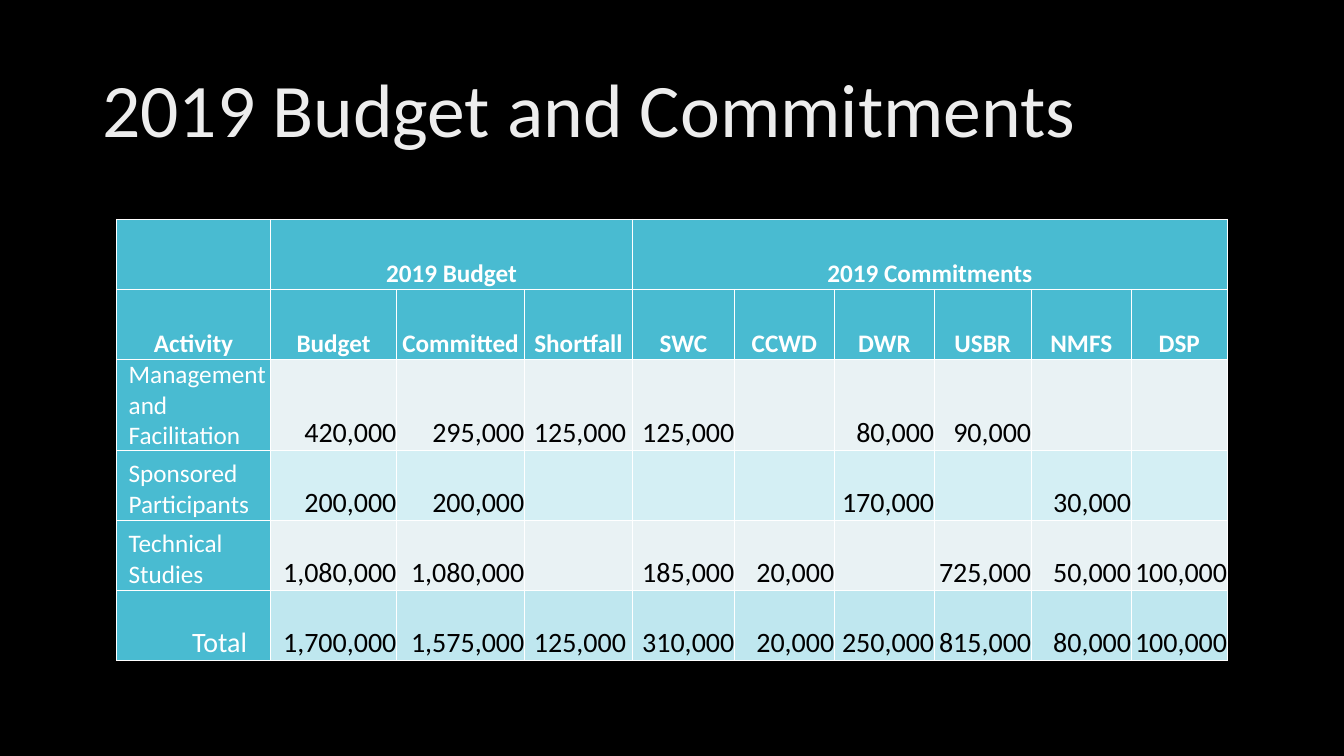
from lxml.etree import SubElement
from pptx import Presentation
from pptx.dml.color import RGBColor
from pptx.enum.text import MSO_ANCHOR, PP_ALIGN
from pptx.oxml.ns import qn
from pptx.util import Pt

FONT = "Calibri"
BLACK = RGBColor(0x00, 0x00, 0x00)
WHITE = RGBColor(0xFF, 0xFF, 0xFF)
TITLE_GREY = RGBColor(0xED, 0xED, 0xED)
TEAL = RGBColor(0x49, 0xBB, 0xD1)
PALE_GREY = RGBColor(0xE9, 0xF2, 0xF4)
PALE_TEAL = RGBColor(0xD4, 0xEF, 0xF4)
TOTAL_TEAL = RGBColor(0xBF, 0xE7, 0xEF)

COLUMN_WIDTHS = [110, 90, 91.4, 77.1, 72.9, 71.4, 71.4, 69.3, 71.4, 68.6]
ROW_HEIGHT = 50
LABEL_INDENT = 8.64
TOTAL_INDENT = 54
SHORTFALL_COLUMN = 3
SHORTFALL_INSET = 4.5

GROUPS = ["", "2019 Budget", "", "", "2019 Commitments", "", "", "", "", ""]
GROUP_SPANS = [(1, 3), (4, 9)]
HEADINGS = ["Activity", "Budget", "Committed", "Shortfall",
            "SWC", "CCWD", "DWR", "USBR", "NMFS", "DSP"]
ACTIVITIES = [
    ["Management and Facilitation", "420,000", "295,000", "125,000",
     "125,000", "", "80,000", "90,000", "", ""],
    ["Sponsored Participants", "200,000", "200,000", "",
     "", "", "170,000", "", "30,000", ""],
    ["Technical Studies", "1,080,000", "1,080,000", "",
     "185,000", "20,000", "", "725,000", "50,000", "100,000"],
]
TOTALS = ["Total", "1,700,000", "1,575,000", "125,000",
          "310,000", "20,000", "250,000", "815,000", "80,000", "100,000"]


def write(paragraph, text, size, color, align=PP_ALIGN.LEFT, bold=False):
    paragraph.text = text
    paragraph.alignment = align
    font = paragraph.font
    font.name = FONT
    font.size = Pt(size)
    font.bold = bold
    font.color.rgb = color


def add_title(slide, text):
    title = slide.shapes.add_textbox(Pt(66), Pt(28.8), Pt(828), Pt(104.4))
    frame = title.text_frame
    frame.word_wrap = True
    frame.vertical_anchor = MSO_ANCHOR.MIDDLE
    heading = frame.paragraphs[0]
    heading.line_spacing = 0.9
    write(heading, text, 54, TITLE_GREY)


def add_borders(cell):
    properties = cell._tc.get_or_add_tcPr()
    for side in ("a:lnL", "a:lnR", "a:lnT", "a:lnB"):
        border = SubElement(properties, qn(side), w=str(Pt(1)))
        fill = SubElement(border, qn("a:solidFill"))
        SubElement(fill, qn("a:srgbClr"), val=str(WHITE))


def fill_cell(cell, text, fill, size, color, align, bold=False, left=0, right=0):
    add_borders(cell)
    cell.fill.solid()
    cell.fill.fore_color.rgb = fill
    cell.vertical_anchor = MSO_ANCHOR.BOTTOM
    cell.margin_left, cell.margin_right = Pt(left), Pt(right)
    cell.margin_top = cell.margin_bottom = 0
    write(cell.text_frame.paragraphs[0], text, size, color, align, bold)


def fill_header_row(row, texts):
    for cell, text in zip(row.cells, texts):
        fill_cell(cell, text, TEAL, 18, WHITE, PP_ALIGN.CENTER, bold=True)


def fill_amount_row(row, texts, fill, label_size=18, indent=LABEL_INDENT):
    label, *amounts = texts
    fill_cell(row.cells[0], label, TEAL, label_size, WHITE, PP_ALIGN.LEFT, left=indent)
    for column, amount in enumerate(amounts, start=1):
        inset = SHORTFALL_INSET if column == SHORTFALL_COLUMN else 0
        fill_cell(row.cells[column], amount, fill, 20, BLACK, PP_ALIGN.RIGHT, right=inset)


def add_budget_table(slide):
    row_count = len(ACTIVITIES) + 3
    table = slide.shapes.add_table(
        row_count, len(COLUMN_WIDTHS), Pt(83.3), Pt(156.8),
        Pt(sum(COLUMN_WIDTHS)), Pt(ROW_HEIGHT * row_count)).table
    table.first_row = table.horz_banding = False
    for column, width in zip(table.columns, COLUMN_WIDTHS):
        column.width = Pt(width)

    group_row, heading_row, *activity_rows, total_row = table.rows
    fill_header_row(group_row, GROUPS)
    fill_header_row(heading_row, HEADINGS)
    for index, (row, activity) in enumerate(zip(activity_rows, ACTIVITIES)):
        fill_amount_row(row, activity, PALE_TEAL if index % 2 else PALE_GREY)
    fill_amount_row(total_row, TOTALS, TOTAL_TEAL, label_size=20, indent=TOTAL_INDENT)

    for first, last in GROUP_SPANS:
        table.cell(0, first).merge(table.cell(0, last))


def main():
    presentation = Presentation()
    presentation.slide_width, presentation.slide_height = Pt(960), Pt(540)
    slide = presentation.slides.add_slide(presentation.slide_layouts[6])
    background = slide.background.fill
    background.solid()
    background.fore_color.rgb = BLACK
    add_title(slide, "2019 Budget and Commitments")
    add_budget_table(slide)
    presentation.save("out.pptx")


if __name__ == "__main__":
    main()
